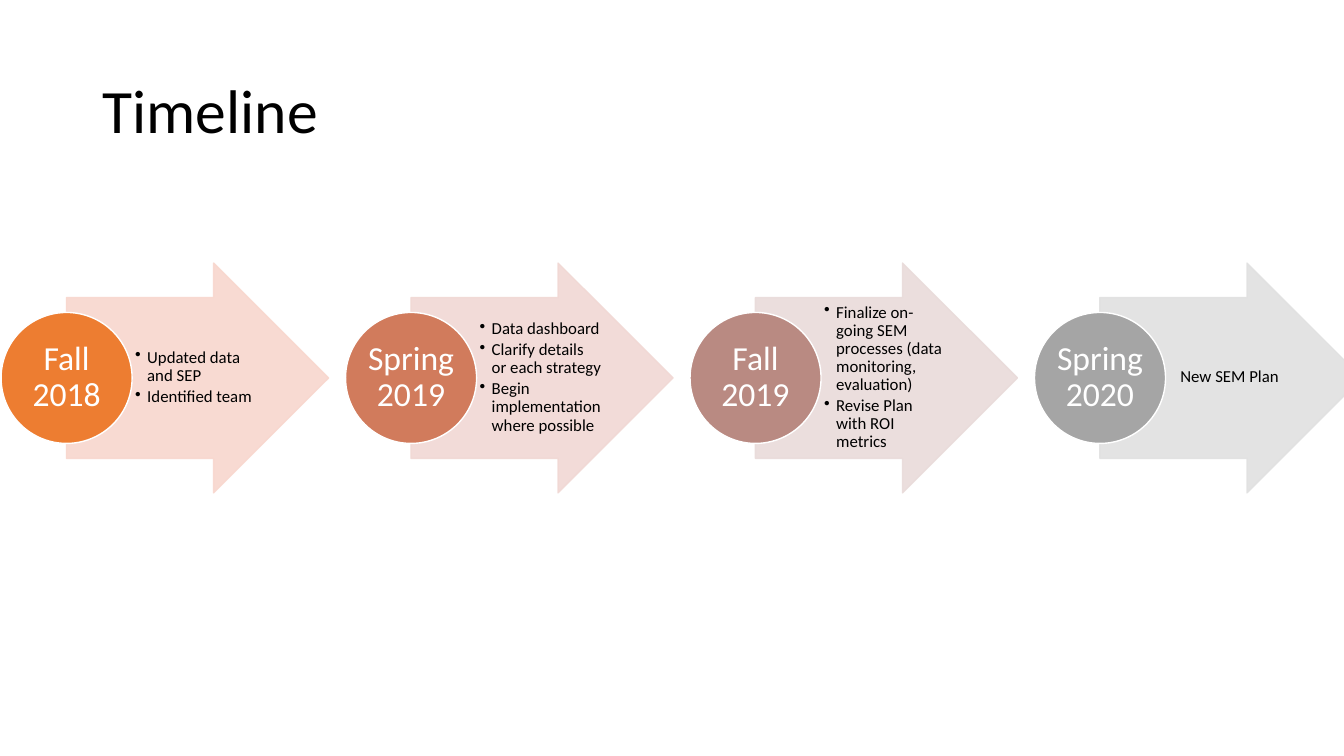
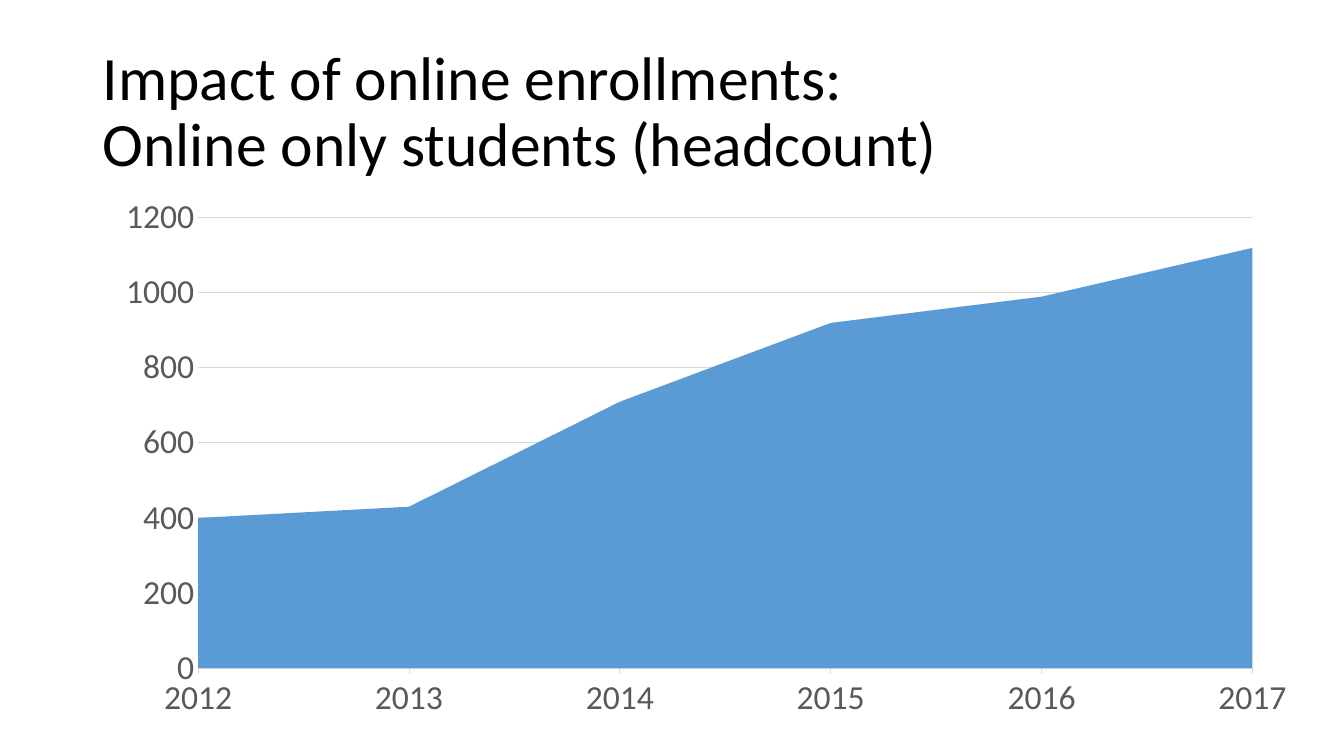
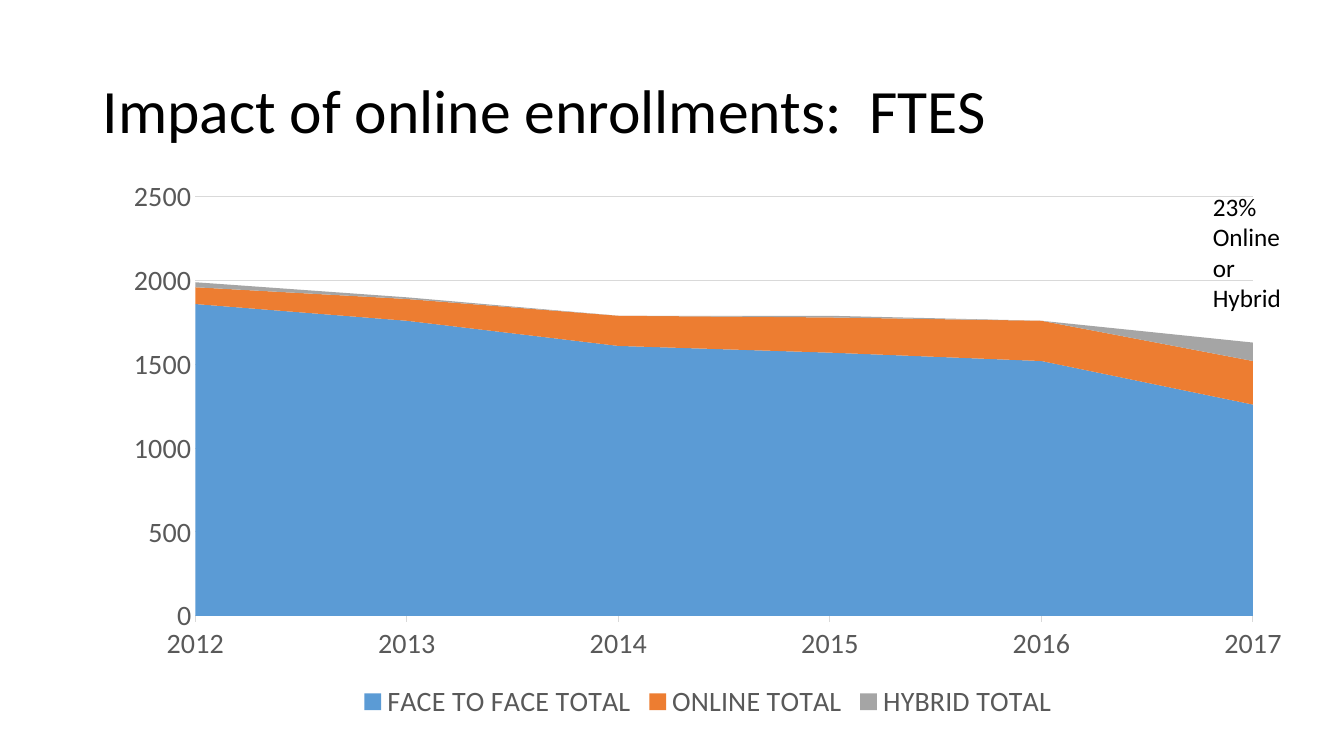
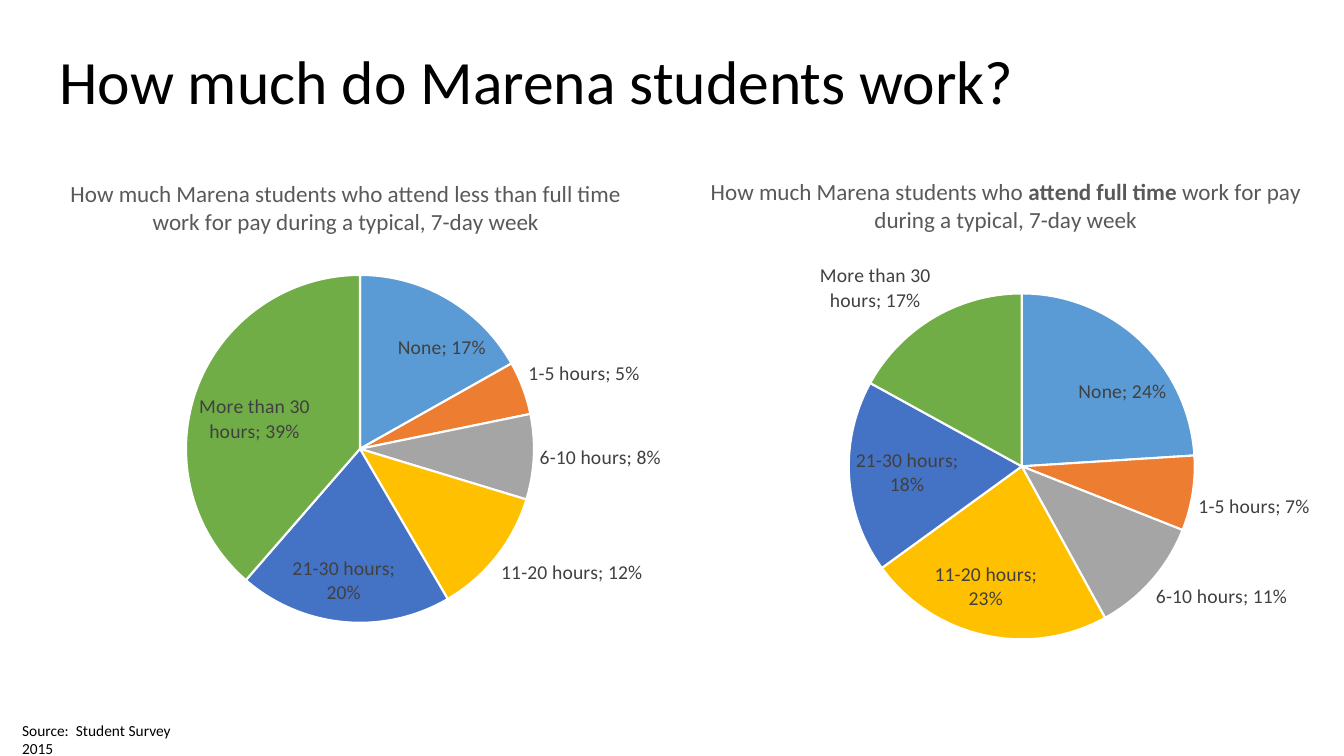
from lxml import etree
from pptx import Presentation
from pptx.chart.data import CategoryChartData
from pptx.dml.color import RGBColor
from pptx.enum.chart import XL_CHART_TYPE, XL_LABEL_POSITION, XL_LEGEND_POSITION, XL_TICK_MARK
from pptx.enum.shapes import MSO_SHAPE
from pptx.enum.text import MSO_ANCHOR, PP_ALIGN
from pptx.oxml.ns import qn
from pptx.util import Inches, Pt

AREA, PIE = XL_CHART_TYPE.AREA_STACKED, XL_CHART_TYPE.PIE
FIT, BELOW = XL_LABEL_POSITION.BEST_FIT, XL_LEGEND_POSITION.BOTTOM
NO_TICK, OUT = XL_TICK_MARK.NONE, XL_TICK_MARK.OUTSIDE
ARROW, OVAL = MSO_SHAPE.RIGHT_ARROW, MSO_SHAPE.OVAL
TOP, MIDDLE = MSO_ANCHOR.TOP, MSO_ANCHOR.MIDDLE
LEFT, CENTER = PP_ALIGN.LEFT, PP_ALIGN.CENTER

FONT = "Calibri"
BLACK, WHITE, GRAY, DARK, PALE = "000000", "FFFFFF", "595959", "404040", "D9D9D9"
HUES = ["5B9BD5", "ED7D31", "A5A5A5", "FFC000", "4472C4", "70AD47"]
hue = RGBColor.from_string

deck = Presentation()
deck.slide_width, deck.slide_height = Inches(13.33), Inches(7.5)


def place(left, top, width, height):
    across, down = deck.slide_width / 100, deck.slide_height / 100
    return int(left * across), int(top * down), int(width * across), int(height * down)


def write(shape, lines, size, color=BLACK, align=LEFT, anchor=MIDDLE,
          pad=None, space=0.9, after=0, bullet=False, wrap=True):
    frame = shape.text_frame
    frame.word_wrap = wrap
    frame.vertical_anchor = anchor
    if pad is not None:
        frame.margin_left = frame.margin_right = Inches(pad)
        frame.margin_top = frame.margin_bottom = Inches(pad)
    frame.text = "\n".join(lines)
    for para in frame.paragraphs:
        para.alignment = align
        para.line_spacing = space
        para.space_after = Pt(after)
        if bullet:
            props = para._p.get_or_add_pPr()
            props.set("marL", str(Inches(0.12)))
            props.set("indent", str(-Inches(0.12)))
            etree.SubElement(props, qn("a:buChar")).set("char", "•")
        para.font.name, para.font.size = FONT, Pt(size)
        para.font.color.rgb = hue(color)


titles = [
    ("Timeline", 6.9, 5.33),
    ("Impact of online enrollments:\vOnline only students (headcount)", 6.9, 5.33),
    ("Impact of online enrollments:  FTES", 6.9, 5.33),
    ("How much do Marena students work?", 3.68, 1.47),
]
slides = []
for title, left, top in titles:
    slide = deck.slides.add_slide(deck.slide_layouts[6])
    write(slide.shapes.add_textbox(*place(left, top, 86.25, 19.33)), [title], 44)
    slides.append(slide)
time, heads, load, work = [slide.shapes for slide in slides]

STEP = 25.63
steps = [
    ("Fall 2018", "ED7D31", "F8D7CE", ["Updated data and SEP", "Identified team"]),
    ("Spring 2019", "D17B5C", "F1D8D4",
     ["Data dashboard", "Clarify details or each strategy",
      "Begin implementation where possible"]),
    ("Fall 2019", "B98A82", "E9DBDA",
     ["Finalize on-going SEM processes (data monitoring, evaluation)",
      "Revise Plan with ROI metrics"]),
    ("Spring 2020", "A5A5A5", "E1E1E1", ["New SEM Plan"]),
]
for col, (term, color, tint, tasks) in enumerate(steps):
    left = col * STEP
    arrow = time.add_shape(ARROW, *place(left + 4.95, 34.8, 19.5, 30.4))
    arrow.adjustments[0], arrow.adjustments[1] = 0.7, 0.5
    disc = time.add_shape(OVAL, *place(left + 0.08, 41.33, 9.75, 17.33))
    for shape, fill, edge in [(arrow, tint, tint), (disc, color, WHITE)]:
        shape.shadow.inherit = False
        shape.fill.solid()
        shape.fill.fore_color.rgb = hue(fill)
        shape.line.color.rgb = hue(edge)
        shape.line.width = Pt(1)
    for paint in arrow._element.xpath("./p:spPr//a:srgbClr"):
        etree.SubElement(paint, qn("a:alpha")).set("val", "90000")
    many = len(tasks) > 1
    note = time.add_textbox(*place(left + 9.83, 39.33, 9.53, 21.2))
    write(note, tasks, 12, align=LEFT if many else CENTER, pad=0.03, after=2, bullet=many)
    write(disc, [term], 24, WHITE, CENTER, pad=0.02)

years = ["2012", "2013", "2014", "2015", "2016", "2017"]
areas = [
    (heads, (7.58, 24.67, 89.95, 71.87), 24, 1200, 200,
     [("Series 1", [400, 430, 710, 920, 990, 1120])]),
    (load, (8.18, 22.27, 88.97, 73.6), 20, 2500, 500,
     [("FACE TO FACE TOTAL", [1860, 1760, 1610, 1570, 1520, 1260]),
      ("ONLINE TOTAL", [100, 130, 180, 210, 240, 260]),
      ("HYBRID TOTAL", [30, 10, 0, 10, 0, 110])]),
]
for shapes, box, size, peak, unit, rows in areas:
    data = CategoryChartData(number_format="0")
    data.categories = years
    for name, vals in rows:
        data.add_series(name, vals)
    chart = shapes.add_chart(AREA, *place(*box), data).chart
    chart.has_title = False
    chart.font.name, chart.font.size = FONT, Pt(size)
    chart.font.color.rgb = hue(GRAY)
    chart.has_legend = len(rows) > 1
    if chart.has_legend:
        chart.legend.position = BELOW
        chart.legend.include_in_layout = False
    for series, color in zip(chart.plots[0].series, HUES):
        series.format.fill.solid()
        series.format.fill.fore_color.rgb = hue(color)
    base, scale = chart.category_axis, chart.value_axis
    base.has_major_gridlines = False
    base.major_tick_mark, base.minor_tick_mark = OUT, NO_TICK
    scale.has_major_gridlines = True
    scale.major_tick_mark = scale.minor_tick_mark = NO_TICK
    scale.minimum_scale, scale.maximum_scale, scale.major_unit = 0, peak, unit
    for line in (base.format.line, scale.major_gridlines.format.line):
        line.color.rgb = hue(PALE)
        line.width = Pt(0.75)
    scale.format.line.fill.background()

write(load.add_textbox(*place(89.5, 24.67, 7.35, 17.47)), ["23% Online or Hybrid"], 18,
      anchor=TOP, space=1)

hours = ["None", "1-5 hours", "6-10 hours", "11-20 hours", "21-30 hours", "More than 30 hours"]
pies = [
    ((44.86, 20.8, 59.94, 69.33), (0.3, 0.26, 0.44, 0.66),
     [("How much Marena students who ", False), ("attend full time", True),
      (" work for pay during a typical, 7-day week", False)],
     [0.24, 0.07, 0.11, 0.23, 0.18, 0.17]),
    ((-0.75, 20.8, 52.96, 70.8), (0.27, 0.22, 0.5, 0.65),
     [("How much Marena students who attend less than full time "
       "work for pay during a typical, 7-day week", False)],
     [0.17, 0.05, 0.08, 0.12, 0.2, 0.39]),
]
for box, inner, words, vals in pies:
    data = CategoryChartData(number_format="0%")
    data.categories = hours
    data.add_series("Series 1", vals)
    chart = work.add_chart(PIE, *place(*box), data).chart
    chart.font.name, chart.font.size = FONT, Pt(14)
    chart.has_legend = False
    chart.has_title = True
    para = chart.chart_title.text_frame.paragraphs[0]
    for text, bold in words:
        run = para.add_run()
        run.text = text
        run.font.name, run.font.size, run.font.bold = FONT, Pt(16.5), bold
        run.font.color.rgb = hue(GRAY)
    plot = chart.plots[0]
    plot.vary_by_categories = True
    for index, color in enumerate(HUES):
        wedge = plot.series[0].points[index].format
        wedge.fill.solid()
        wedge.fill.fore_color.rgb = hue(color)
        wedge.line.color.rgb = hue(WHITE)
        wedge.line.width = Pt(1.5)
    plot.has_data_labels = True
    labels = plot.data_labels
    labels.show_value = labels.show_category_name = True
    labels.show_percentage = False
    labels.number_format, labels.number_format_is_linked = "0%", False
    labels.position = FIT
    labels.font.name, labels.font.size = FONT, Pt(14)
    labels.font.color.rgb = hue(DARK)
    area = chart._chartSpace.xpath(".//c:plotArea")[0]
    for old in area.findall(qn("c:layout")):
        area.remove(old)
    layout = etree.Element(qn("c:layout"))
    manual = etree.SubElement(layout, qn("c:manualLayout"))
    rules = [("layoutTarget", "inner"), ("xMode", "edge"), ("yMode", "edge")]
    for tag, val in rules + list(zip("xywh", inner)):
        etree.SubElement(manual, qn("c:" + tag)).set("val", str(val))
    area.insert(0, layout)

write(work.add_textbox(*place(0.9, 94.67, 14.48, 3.87)), ["Source:  Student Survey 2015"], 11,
      anchor=TOP, space=1, wrap=False)

deck.save("out.pptx")
